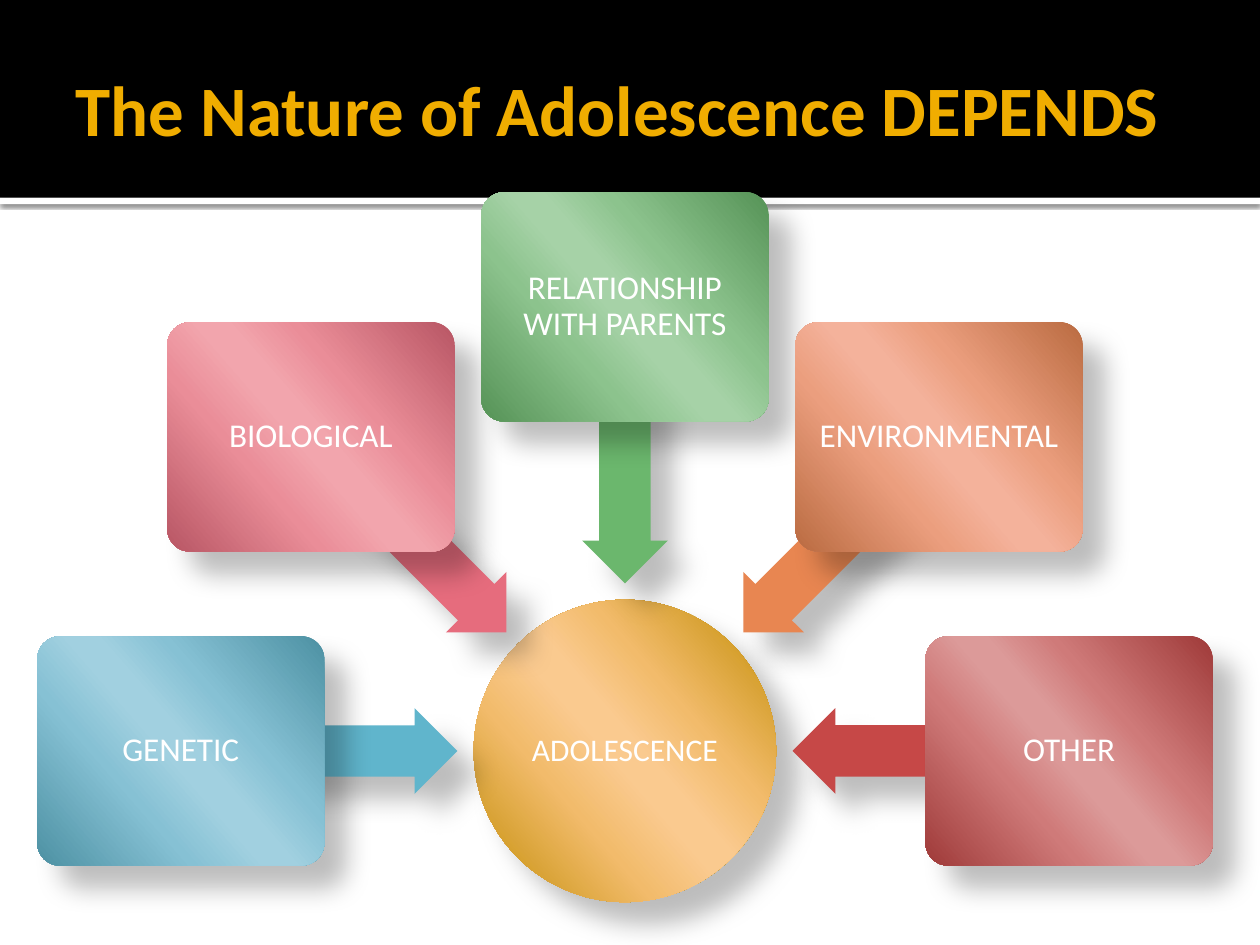
import math
from lxml import etree
from pptx import Presentation
from pptx import util as u
from pptx.dml.color import RGBColor
from pptx.enum import shapes, text
from pptx.oxml.ns import qn

COLUMNS, ROWS = 100, 75
WHITE = RGBColor(0xFF, 0xFF, 0xFF)
BLACK = RGBColor(0x00, 0x00, 0x00)
GOLD = RGBColor(0xF0, 0xAD, 0x00)
GOLD_SHADES = (RGBColor(0xC0, 0x8B, 0x00), RGBColor(0xF2, 0xBB, 0x6B), RGBColor(0xFA, 0xCA, 0x8F))
BLUE = RGBColor(0x60, 0xB5, 0xCC)
BLUE_SHADES = (RGBColor(0x4D, 0x91, 0xA3), RGBColor(0x86, 0xC1, 0xD4), RGBColor(0xA1, 0xD0, 0xE0))
PINK = RGBColor(0xE6, 0x6C, 0x7D)
PINK_SHADES = (RGBColor(0xB8, 0x56, 0x64), RGBColor(0xEA, 0x8D, 0x98), RGBColor(0xF2, 0xA5, 0xAD))
GREEN = RGBColor(0x6B, 0xB7, 0x6D)
GREEN_SHADES = (RGBColor(0x56, 0x93, 0x57), RGBColor(0x8C, 0xC3, 0x8D), RGBColor(0xA6, 0xD2, 0xA7))
ORANGE = RGBColor(0xE8, 0x86, 0x51)
ORANGE_SHADES = (RGBColor(0xBA, 0x6B, 0x41), RGBColor(0xEB, 0x9E, 0x7E), RGBColor(0xF4, 0xB2, 0x9B))
RED = RGBColor(0xC6, 0x48, 0x47)
RED_SHADES = (RGBColor(0x9F, 0x3A, 0x39), RGBColor(0xCF, 0x7A, 0x79), RGBColor(0xDC, 0x9A, 0x99))

HUB = (49.6, 59.6)
HUB_SIZE = (24, 24)
FACTOR_SIZE, FACTOR_RADIUS = (22.8, 18.2), 35.25
ARROW_SIZE, ARROW_RADIUS = (22, 6.8), 24.3
FACTORS = [
    ("GENETIC", BLUE, BLUE_SHADES),
    ("BIOLOGICAL", PINK, PINK_SHADES),
    ("RELATIONSHIP WITH PARENTS", GREEN, GREEN_SHADES),
    ("ENVIRONMENTAL", ORANGE, ORANGE_SHADES),
    ("OTHER", RED, RED_SHADES),
]


def write(shape, content, size, color=WHITE, bold=False, align=text.PP_ALIGN.CENTER,
          spacing=0.9, insets=(0.04, 0.04, 0.04, 0.04)):
    frame = shape.text_frame
    frame.word_wrap = True
    frame.auto_size = text.MSO_AUTO_SIZE.NONE
    frame.vertical_anchor = text.MSO_ANCHOR.MIDDLE
    frame.margin_left, frame.margin_top, frame.margin_right, frame.margin_bottom = map(u.Inches, insets)
    paragraph = frame.paragraphs[0]
    paragraph.alignment = align
    paragraph.line_spacing = spacing
    run = paragraph.add_run()
    run.text = content
    run.font.name = "Calibri"
    run.font.size = u.Pt(size)
    run.font.bold = bold
    run.font.color.rgb = color


def add_shadow(shape, opacity, blur, distance, angle):
    shape.shadow.inherit = False
    effects = shape._element.spPr.find(qn("a:effectLst"))
    shadow = etree.SubElement(effects, qn("a:outerShdw"), blurRad=str(u.Pt(blur)),
                              dist=str(u.Pt(distance)), dir=str(angle * 60000),
                              algn="tl", rotWithShape="0")
    color = etree.SubElement(shadow, qn("a:srgbClr"), val=str(BLACK))
    etree.SubElement(color, qn("a:alpha"), val=str(opacity * 1000))


def add_gradient(shape, shades):
    dark, middle, light = shades
    shape.fill.gradient()
    gradient = shape._element.spPr.find(qn("a:gradFill"))
    for child in list(gradient):
        gradient.remove(child)
    stops = etree.SubElement(gradient, qn("a:gsLst"))
    for position, shade in zip((0, 33, 47, 53, 68, 100), (dark, middle, light, light, middle, dark)):
        stop = etree.SubElement(stops, qn("a:gs"), pos=str(position * 1000))
        etree.SubElement(stop, qn("a:srgbClr"), val=str(shade))
    etree.SubElement(gradient, qn("a:lin"), ang=str(139 * 60000), scaled="0")


class Deck:
    def __init__(self):
        self.presentation = Presentation()
        self.presentation.slide_width = u.Inches(10)
        self.presentation.slide_height = u.Inches(7.5)
        self.slide = self.presentation.slides.add_slide(self.presentation.slide_layouts[5])

    def place(self, left, top, width, height):
        column = self.presentation.slide_width / COLUMNS
        row = self.presentation.slide_height / ROWS
        return [round(length) for length in (left * column, top * row, width * column, height * row)]

    def shape(self, kind, box, color=None):
        shape = self.slide.shapes.add_shape(kind, *self.place(*box))
        shape.shadow.inherit = False
        shape.line.fill.background()
        if color is not None:
            shape.fill.solid()
            shape.fill.fore_color.rgb = color
        return shape

    def title(self, content):
        title = self.slide.shapes.title
        title.left, title.top, title.width, title.height = self.place(5, 1.7, 90, 13.7)
        write(title, content, 40.5, GOLD, True, text.PP_ALIGN.LEFT, 1, (0.1, 0.05, 0.05, 0.05))
        self.slide.shapes._spTree.append(title._element)

    def header(self):
        rule = self.shape(shapes.MSO_SHAPE.RECTANGLE, (0, 15.7, COLUMNS, 0.5), WHITE)
        add_shadow(rule, 60, 2.5, 0.8, 90)
        self.shape(shapes.MSO_SHAPE.RECTANGLE, (0, 0, COLUMNS, 15.7), BLACK)

    def around_hub(self, kind, size, radius=0, angle=0, color=None):
        width, height = size
        left = HUB[0] + radius * math.cos(math.radians(angle)) - width / 2
        top = HUB[1] + radius * math.sin(math.radians(angle)) - height / 2
        shape = self.shape(kind, (left, top, width, height), color)
        add_shadow(shape, 26, 15, 18, 45)
        return shape

    def hub(self, content):
        circle = self.around_hub(shapes.MSO_SHAPE.OVAL, HUB_SIZE)
        add_gradient(circle, GOLD_SHADES)
        write(circle, content, 18, insets=(0.01, 0.01, 0.01, 0.01))

    def factor(self, content, color, shades, angle):
        arrow = self.around_hub(shapes.MSO_SHAPE.LEFT_ARROW, ARROW_SIZE, ARROW_RADIUS, angle, color)
        arrow.adjustments[0] = 0.6
        arrow.rotation = angle
        card = self.around_hub(shapes.MSO_SHAPE.ROUNDED_RECTANGLE, FACTOR_SIZE, FACTOR_RADIUS, angle)
        card.adjustments[0] = 0.1
        add_gradient(card, shades)
        write(card, content, 19)


def main():
    deck = Deck()
    deck.header()
    deck.title("The Nature of Adolescence DEPENDS")
    deck.hub("ADOLESCENCE")
    for index, (content, color, shades) in enumerate(FACTORS):
        deck.factor(content, color, shades, 180 + 45 * index)
    deck.presentation.save("out.pptx")


if __name__ == "__main__":
    main()
